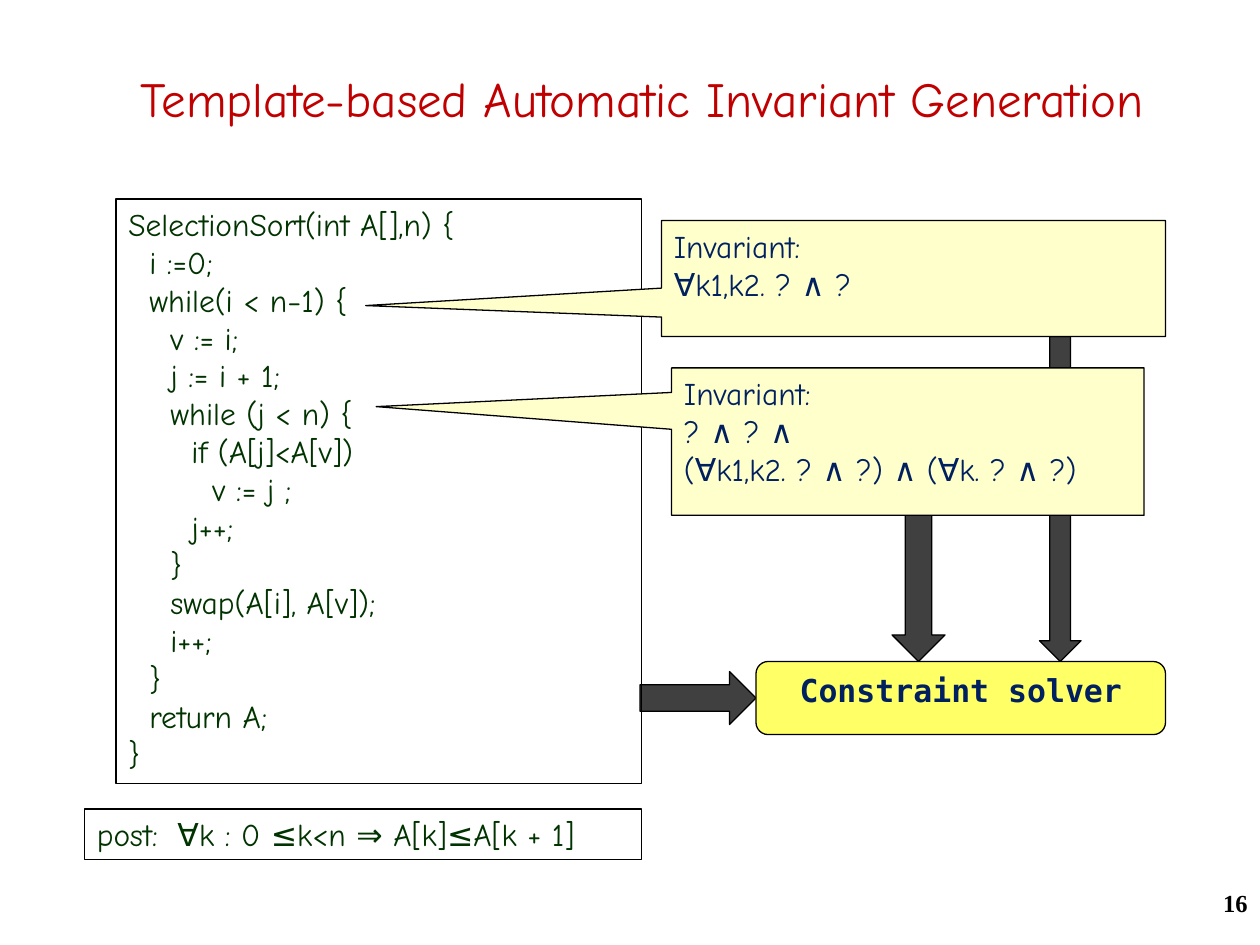
"""Builds a slide on template-based automatic invariant generation."""
import pptx
import pptx.dml.color
import pptx.enum.shapes
import pptx.enum.text
import pptx.oxml
import pptx.oxml.ns
import pptx.util

Inches = pptx.util.Inches
SHAPE = pptx.enum.shapes.MSO_SHAPE
ALIGN = pptx.enum.text.PP_ALIGN
ANCHOR = pptx.enum.text.MSO_ANCHOR

COLORS = {
    "title": "C00000", "code": "003300", "navy": "002060", "black": "000000",
    "arrow": "404040", "solver": "FFFF66", "callout": "FFFFCC",
}
INDENT = 0.167
POST_TAB = 0.64

TITLE = {"name": "Comic Neue", "size": pptx.util.Pt(28), "color": "title"}
CODE = {"name": "Comic Neue", "size": pptx.util.Pt(18), "color": "code"}
INVARIANT = {**CODE, "color": "navy"}
SOLVER = {"name": "DejaVu Sans Mono", "size": pptx.util.Pt(18), "bold": True, "color": "navy"}
NUMBER = {"name": "Times New Roman", "size": pptx.util.Pt(14), "bold": True, "color": "black"}

PROGRAM = [
    (0, "SelectionSort(int A[],n) {"),
    (1, "i :=0;"),
    (1, "while(i < n−1) {"),
    (2, "v := i;"),
    (2, "j := i + 1;"),
    (2, "while (j < n) {"),
    (3, "if (A[j]<A[v])"),
    (4, "v := j ;"),
    (3, "j++;"),
    (2, "}"),
    (2, "swap(A[i], A[v]);"),
    (2, "i++;"),
    (1, "}"),
    (1, "return A;"),
    (0, "}"),
]
ARROWS = [
    ((8.25, 2.67, 0.33, 2.58), 0),
    ((7.08, 4.08, 0.42, 1.17), 0),
    ((5.33, 5.08, 0.42, 0.92), 270),
]
CALLOUTS = [
    ((5.25, 1.75, 4, 0.92), (-1.087, 0.234),
     ["Invariant:", "∀k1,k2. ? ∧ ?"]),
    ((5.33, 2.92, 3.75, 1.17), (-1.125, -0.237),
     ["Invariant:", "? ∧ ? ∧", "(∀k1,k2. ? ∧ ?) ∧ (∀k. ? ∧ ?)"]),
]


def rgb(name):
    """Return the named colour."""
    return pptx.dml.color.RGBColor.from_string(COLORS[name])


def write(sp, lines, style, align=ALIGN.LEFT, anchor=ANCHOR.TOP):
    """Fill a shape with (level, text) lines in one style."""
    tf = sp.text_frame
    tf.word_wrap = True
    tf.vertical_anchor = anchor
    for i, (level, text) in enumerate(lines):
        p = tf.add_paragraph() if i else tf.paragraphs[0]
        p.alignment = align
        if level:
            p._p.get_or_add_pPr().set("marL", str(Inches(level * INDENT)))
        r = p.add_run()
        r.text = text
        for key, value in style.items():
            if key == "color":
                r.font.color.rgb = rgb(value)
            else:
                setattr(r.font, key, value)


def add_box(s, kind, box, fill=None):
    """Add an outlined preset shape, filled if a colour is named."""
    sp = s.shapes.add_shape(kind, *map(Inches, box))
    sp.shadow.inherit = False
    sp.line.color.rgb = rgb("black")
    sp.line.width = pptx.util.Pt(0.75)
    if fill:
        sp.fill.solid()
        sp.fill.fore_color.rgb = rgb(fill)
    else:
        sp.fill.background()
    return sp


def add_arrow(s, box, rotation):
    """Add a block arrow that leads to the solver."""
    add_box(s, SHAPE.DOWN_ARROW, box, "arrow").rotation = rotation


def add_callout(s, box, tip, lines):
    """Add an invariant callout whose tip points at a loop."""
    sp = add_box(s, SHAPE.RECTANGULAR_CALLOUT, box, "callout")
    for i, value in enumerate(tip):
        sp.adjustments[i] = value
    write(sp, [(0, line) for line in lines], INVARIANT)


def add_label(s, box, text, style, align, anchor=ANCHOR.TOP):
    """Add a one-line text box."""
    sp = s.shapes.add_textbox(*map(Inches, box))
    write(sp, [(0, text)], style, align, anchor)


def add_tab_stop(p, position):
    """Give a paragraph one left tab stop."""
    pPr = p._p.get_or_add_pPr()
    tabs = pptx.oxml.parse_xml(
        f'<a:tabLst {pptx.oxml.ns.nsdecls("a")}>'
        f'<a:tab pos="{Inches(position)}" algn="l"/></a:tabLst>')
    pPr.append(tabs)


def main():
    """Build and save the slide."""
    prs = pptx.Presentation()
    prs.slide_width, prs.slide_height = Inches(10), Inches(7.5)
    s = prs.slides.add_slide(prs.slide_layouts[6])

    for box, rotation in ARROWS:
        add_arrow(s, box, rotation)
    solver = add_box(s, SHAPE.ROUNDED_RECTANGLE, (6, 5.25, 3.25, 0.58), "solver")
    write(solver, [(0, "Constraint solver")], SOLVER, ALIGN.CENTER)

    add_label(s, (0.19, 0.18, 9.81, 1.2), "Template-based Automatic Invariant Generation",
              TITLE, ALIGN.CENTER, ANCHOR.MIDDLE)
    write(add_box(s, SHAPE.RECTANGLE, (0.92, 1.58, 4.17, 4.64)), PROGRAM, CODE)
    post = add_box(s, SHAPE.RECTANGLE, (0.67, 6.42, 4.42, 0.4))
    write(post, [(0, "post:\t∀k : 0 ≤k<n ⇒ A[k]≤A[k + 1]")], CODE)
    add_tab_stop(post.text_frame.paragraphs[0], POST_TAB)

    for box, tip, lines in CALLOUTS:
        add_callout(s, box, tip, lines)
    add_label(s, (7.92, 7, 2.08, 0.5), "16", NUMBER, ALIGN.RIGHT)
    prs.save("out.pptx")


if __name__ == "__main__":
    main()
